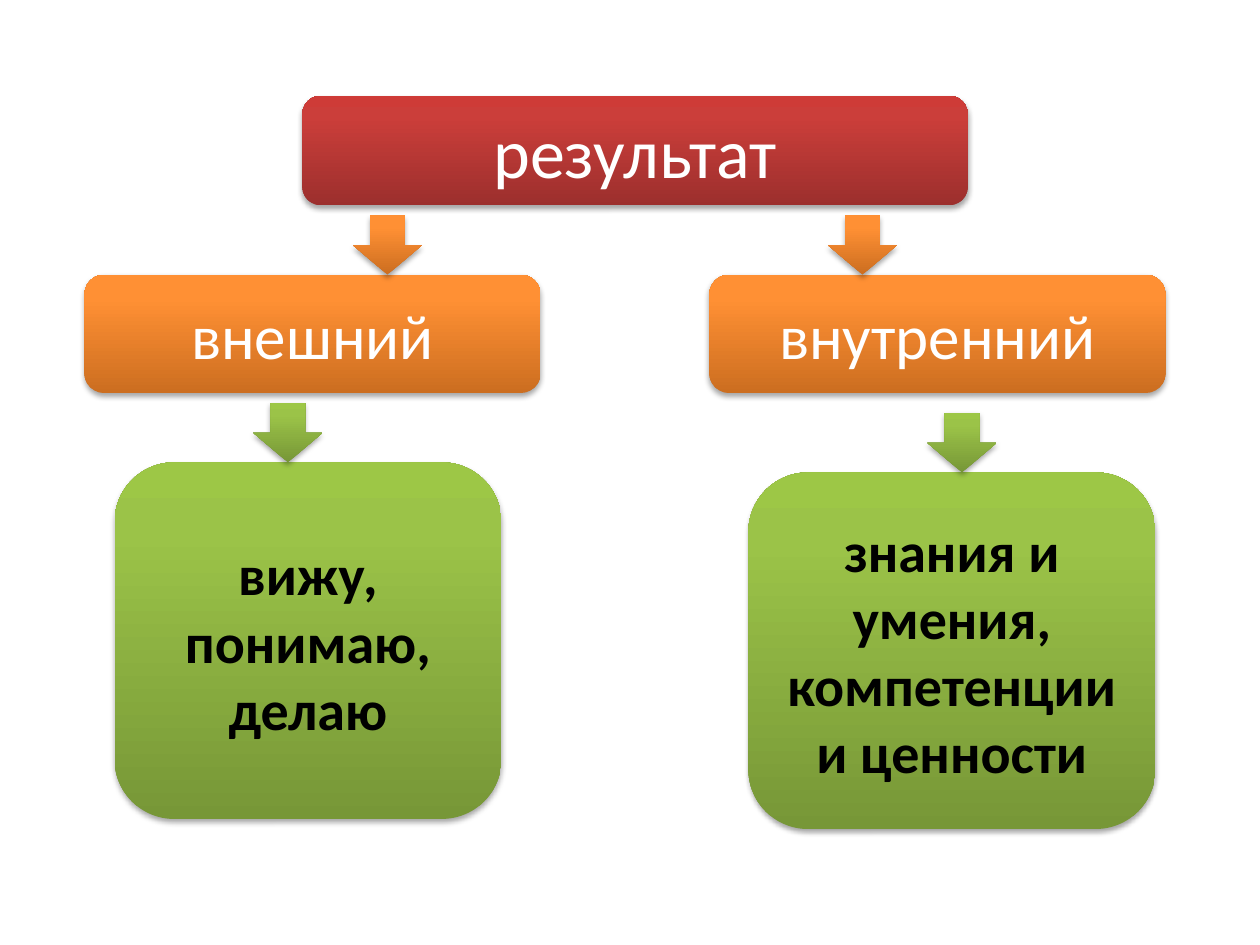
from lxml.etree import SubElement
from pptx import Presentation
from pptx.dml.color import RGBColor
from pptx.enum.shapes import MSO_SHAPE as Shape
from pptx.enum.text import MSO_ANCHOR as Anchor, PP_ALIGN as Align
from pptx.oxml.ns import qn
from pptx.util import Inches, Pt

FONT = "Calibri"
COLORS = {"white": "FFFFFF", "black": "000000"}
GRADIENTS = {  # bottom, 80 % of the way up, top
    "red": ("9C2F2D", "CB3E3A", "CE3B37"),
    "orange": ("CC6E20", "FF9034", "FF9136"),
    "green": ("779737", "9BC348", "9DC746"),
}
STOPS = (0, 80, 100)
LEVELS = {  # gradient, text size, text colour, bold
    "result": ("red", 40, "white", False),
    "kind": ("orange", 36, "white", False),
    "detail": ("green", 32, "black", True),
}
# level, (left, top, width, height), left of the arrow above, paragraphs
CARDS = [
    ("result", (2.4, 0.76, 5.28, 0.87), None, ["результат"]),
    ("kind", (0.67, 2.18, 3.62, 0.94), 2.8, ["внешний"]),
    ("kind", (5.63, 2.18, 3.62, 0.94), 6.57, ["внутренний"]),
    ("detail", (0.91, 3.67, 3.07, 2.83), 2.01, ["вижу,", "понимаю,", "делаю"]),
    ("detail", (5.94, 3.75, 3.23, 2.83), 7.36,
     ["знания и умения, компетенции и ценности"]),
]
ARROW_WIDTH, ARROW_HEIGHT = 0.55, 0.47


def add_color(parent, color):
    return SubElement(parent, qn("a:srgbClr"), val=color)


def apply_gradient(shape, name):
    shape.fill.background()
    empty = shape._element.spPr.find(qn("a:noFill"))
    gradient = empty.makeelement(qn("a:gradFill"), {"rotWithShape": "1"})
    stops = SubElement(gradient, qn("a:gsLst"))
    for percent, color in zip(STOPS, GRADIENTS[name]):
        add_color(SubElement(stops, qn("a:gs"), pos=str(percent * 1000)), color)
    SubElement(gradient, qn("a:lin"), ang=str(270 * 60000), scaled="0")
    empty.getparent().replace(empty, gradient)


def apply_shadow(shape):
    shape.shadow.inherit = False
    effects = shape._element.spPr.find(qn("a:effectLst"))
    shadow = SubElement(effects, qn("a:outerShdw"), blurRad=str(Pt(3.1)),
                        dist=str(Pt(1.8)), dir=str(90 * 60000), rotWithShape="0")
    SubElement(add_color(shadow, COLORS["black"]), qn("a:alpha"), val="35000")


def add_block(page, kind, place, gradient):
    shape = page.shapes.add_shape(kind, *map(Inches, place))
    apply_gradient(shape, gradient)
    shape.line.fill.background()
    apply_shadow(shape)
    return shape


def write_text(shape, lines, size, color, bold):
    frame = shape.text_frame
    frame.word_wrap = True
    frame.vertical_anchor = Anchor.MIDDLE
    for index, line in enumerate(lines):
        para = frame.add_paragraph() if index else frame.paragraphs[0]
        para.alignment = Align.CENTER
        span = para.add_run()
        span.text = line
        span.font.name = FONT
        span.font.size = Pt(size)
        span.font.bold = bold
        span.font.color.rgb = RGBColor.from_string(COLORS[color])


def main():
    deck = Presentation()
    deck.slide_width, deck.slide_height = Inches(10), Inches(7.5)
    page = deck.slides.add_slide(deck.slide_layouts[6])
    for level, place, _, lines in CARDS:
        gradient, *style = LEVELS[level]
        write_text(add_block(page, Shape.ROUNDED_RECTANGLE, place, gradient),
                   lines, *style)
    for level, (_, top, _, _), arrow_left, _ in CARDS:
        if arrow_left is not None:
            place = (arrow_left, top - ARROW_HEIGHT, ARROW_WIDTH, ARROW_HEIGHT)
            add_block(page, Shape.DOWN_ARROW, place, LEVELS[level][0])
    deck.save("out.pptx")


if __name__ == "__main__":
    main()
